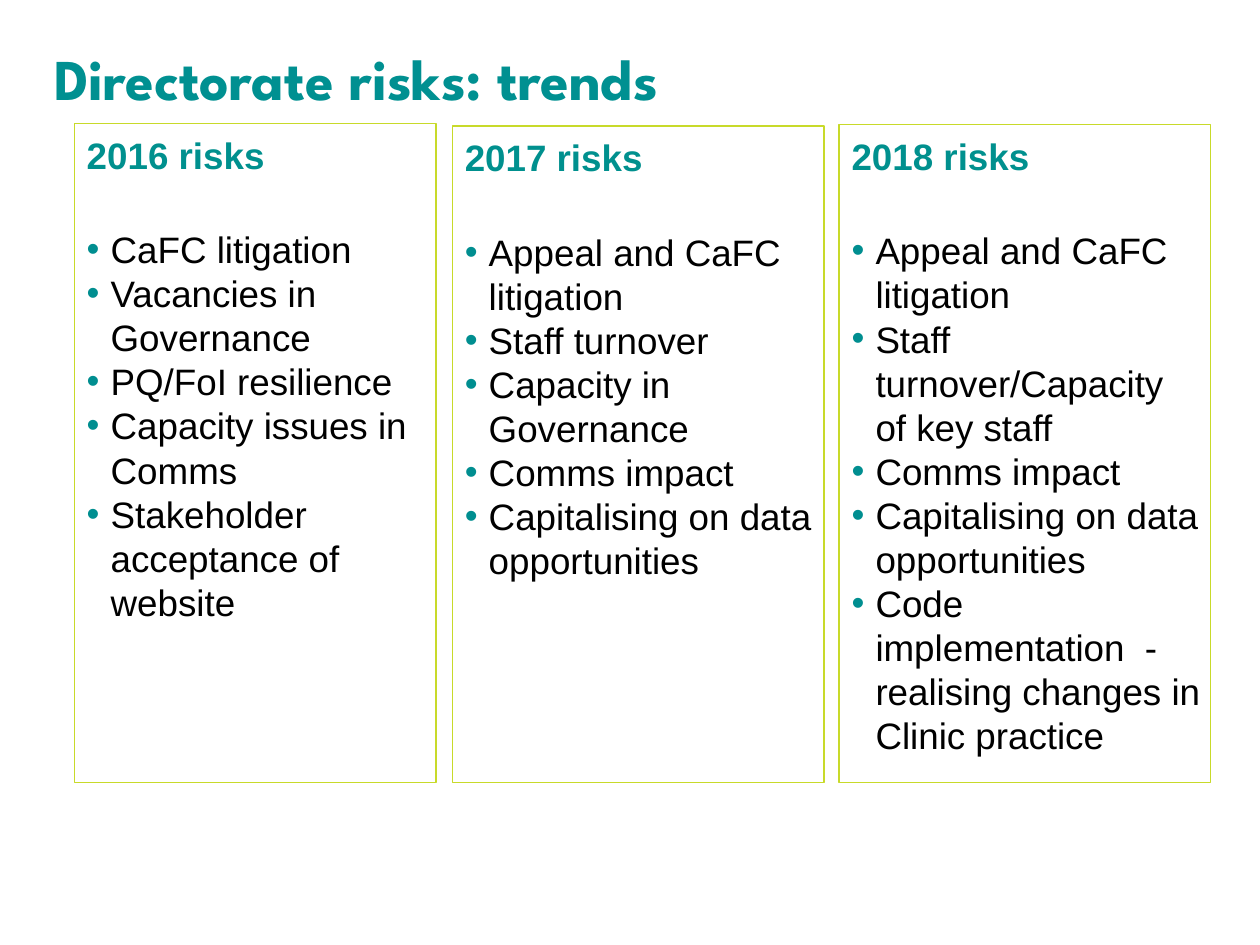
from dataclasses import dataclass

from lxml import etree
from pptx import Presentation
from pptx import util as u
from pptx.dml.color import RGBColor
from pptx.enum import shapes, text
from pptx.oxml import ns


@dataclass(frozen=True)
class Theme:
    title_color: str = "009091"
    heading_color: str = "00908E"
    bullet_color: str = "008E90"
    body_color: str = "000000"
    border_color: str = "C8DA2A"
    title_font: str = "League Spartan"
    body_font: str = "Arial"
    title_size: float = 33
    body_size: float = 21
    line_pitch: float = 25.2
    heading_gap: float = 28.8


@dataclass(frozen=True)
class RiskPanel:
    year: int
    left: float
    top: float
    width: float
    risks: tuple[str, ...]


THEME = Theme()
PANEL_BOTTOM = 6.21
BULLET_INDENT = 0.19

PANELS = (
    RiskPanel(2016, 0.59, 0.98, 2.87, (
        "CaFC litigation",
        "Vacancies in Governance",
        "PQ/FoI resilience",
        "Capacity issues in Comms",
        "Stakeholder acceptance of website",
    )),
    RiskPanel(2017, 3.59, 1.0, 2.95, (
        "Appeal and CaFC litigation",
        "Staff turnover",
        "Capacity in Governance",
        "Comms impact",
        "Capitalising on data opportunities",
    )),
    RiskPanel(2018, 6.66, 0.99, 2.95, (
        "Appeal and CaFC litigation",
        "Staff turnover/Capacity of key staff",
        "Comms impact",
        "Capitalising on data opportunities",
        "Code implementation  - realising changes in Clinic practice",
    )),
)


def style_runs(para, font: str, size: float, color: str, bold: bool) -> None:
    for span in para.runs:
        span.font.name = font
        span.font.size = u.Pt(size)
        span.font.bold = bold
        span.font.color.rgb = RGBColor.from_string(color)


def add_bullet(para) -> None:
    """Give a paragraph a coloured bullet and a hanging indent."""
    props = para._p.get_or_add_pPr()
    indent = u.Inches(BULLET_INDENT)
    props.set("marL", str(indent))
    props.set("indent", str(-indent))
    color = etree.SubElement(props, ns.qn("a:buClr"))
    etree.SubElement(color, ns.qn("a:srgbClr")).set("val", THEME.bullet_color)
    etree.SubElement(props, ns.qn("a:buFont")).set("typeface", THEME.body_font)
    etree.SubElement(props, ns.qn("a:buChar")).set("char", "•")


def set_title(page, wording: str) -> None:
    box = page.shapes.title
    box.left, box.top = u.Inches(0.43), u.Inches(0.43)
    box.width, box.height = u.Inches(9.13), u.Inches(0.48)
    frame = box.text_frame
    frame.text = wording
    frame.margin_left = frame.margin_right = 0
    frame.margin_top = frame.margin_bottom = 0
    frame.vertical_anchor = text.MSO_ANCHOR.TOP
    frame.auto_size = text.MSO_AUTO_SIZE.NONE
    para = frame.paragraphs[0]
    para.alignment = text.PP_ALIGN.LEFT
    para.line_spacing = u.Pt(THEME.title_size)
    style_runs(para, THEME.title_font, THEME.title_size, THEME.title_color, True)


def draw_panel(page, panel: RiskPanel) -> None:
    box = page.shapes.add_shape(
        shapes.MSO_SHAPE.RECTANGLE,
        u.Inches(panel.left), u.Inches(panel.top),
        u.Inches(panel.width), u.Inches(PANEL_BOTTOM - panel.top))
    box.shadow.inherit = False
    box.fill.background()
    box.line.color.rgb = RGBColor.from_string(THEME.border_color)
    box.line.width = u.Pt(0.75)

    frame = box.text_frame
    frame.word_wrap = True
    frame.vertical_anchor = text.MSO_ANCHOR.TOP
    frame.margin_top = u.Inches(0.07)
    frame.margin_right = u.Inches(0.08)
    frame.text = "\n".join((f"{panel.year} risks", *panel.risks))

    # Heading first, then the bulleted risks
    for index, para in enumerate(frame.paragraphs):
        is_heading = index == 0
        para.alignment = text.PP_ALIGN.LEFT
        if not is_heading:
            add_bullet(para)
        para.line_spacing = u.Pt(THEME.line_pitch)
        if index == 1:
            para.space_before = u.Pt(THEME.heading_gap)
        color = THEME.heading_color if is_heading else THEME.body_color
        style_runs(para, THEME.body_font, THEME.body_size, color, is_heading)


def main() -> None:
    deck = Presentation()
    deck.slide_width, deck.slide_height = u.Inches(10), u.Inches(7.5)
    page = deck.slides.add_slide(deck.slide_layouts.get_by_name("Title Only"))
    set_title(page, "Directorate risks: trends")
    for panel in PANELS:
        draw_panel(page, panel)
    deck.save("out.pptx")


if __name__ == "__main__":
    main()
